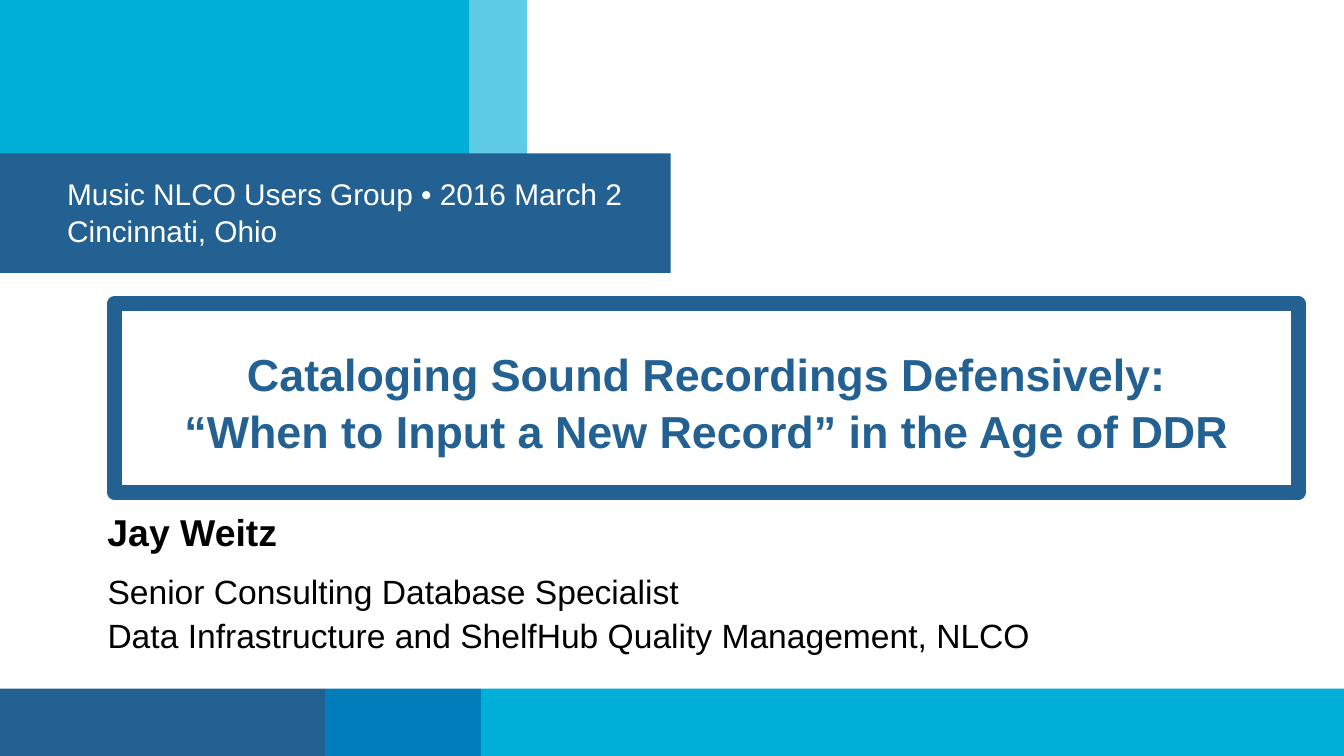
from pptx import Presentation
from pptx.dml.color import RGBColor
from pptx.enum.shapes import MSO_SHAPE
from pptx.enum.text import MSO_ANCHOR, PP_ALIGN
from pptx.oxml.ns import qn
from pptx.util import Inches, Pt
from lxml import etree

RECTANGLE = MSO_SHAPE.RECTANGLE
TOP = MSO_ANCHOR.TOP
LEFT, CENTER = PP_ALIGN.LEFT, PP_ALIGN.CENTER

WIDTH = Inches(10)
HEIGHT = WIDTH * 9 // 16
FONT = "Arial"
COLORS = {
    "navy": "236192",
    "blue": "007DBA",
    "cyan": "00AFD7",
    "white": "FFFFFF",
    "black": "000000",
}


def color(name):
    """Return the named colour."""
    return RGBColor.from_string(COLORS[name])


def area(left, top, width, height):
    """Turn percentages of the slide's size into lengths."""
    return [round(share * side / 100) for share, side in
            zip((left, top, width, height), (WIDTH, HEIGHT) * 2)]


def add_block(slide, place, fill, opacity=100):
    """Add a plain colour block, optionally see-through."""
    block = slide.shapes.add_shape(RECTANGLE, *area(*place))
    block.shadow.inherit = False
    block.line.fill.background()
    block.fill.solid()
    block.fill.fore_color.rgb = color(fill)
    if opacity < 100:
        tint = block.fill._xPr.find(qn("a:solidFill"))[0]
        etree.SubElement(tint, qn("a:alpha"), val=str(opacity * 1000))
    return block


def add_frame(slide, place, outline, thickness):
    """Add an unfilled rectangle with a heavy outline."""
    frame = slide.shapes.add_shape(RECTANGLE, *area(*place))
    frame.shadow.inherit = False
    frame.fill.background()
    frame.line.color.rgb = color(outline)
    frame.line.width = Pt(thickness)
    return frame


def add_label(slide, place):
    """Add an empty text box."""
    return slide.shapes.add_textbox(*area(*place))


def write(holder, lines, size, ink, insets, bold=False, align=LEFT, spacing=1, before=0):
    """Write one paragraph per line, all in one style."""
    frame = holder.text_frame
    frame.word_wrap = True
    frame.vertical_anchor = TOP
    (frame.margin_left, frame.margin_top,
     frame.margin_right, frame.margin_bottom) = map(Inches, insets)
    frame.text = "\n".join(lines)
    for paragraph in frame.paragraphs:
        paragraph.alignment = align
        paragraph.line_spacing = spacing
        paragraph.space_before = Pt(before)
        for run in paragraph.runs:
            run.font.name = FONT
            run.font.size = Pt(size)
            run.font.bold = bold
            run.font.color.rgb = color(ink)


def add_bands(slide):
    """Add the footer band and the two blocks at the top."""
    left = 0
    for width, fill in ((24.2, "navy"), (11.6, "blue"), (64.2, "cyan")):
        add_block(slide, (left, 91.1, width, 8.9), fill)
        left += width
    add_block(slide, (0, 0, 34.9, 20.6), "cyan")
    add_block(slide, (34.3, 0, 4.9, 20.6), "cyan", opacity=63)


def main():
    """Build and save the title slide."""
    deck = Presentation()
    deck.slide_width, deck.slide_height = WIDTH, HEIGHT
    slide = deck.slides.add_slide(deck.slide_layouts[6])
    add_bands(slide)

    event = add_block(slide, (0, 20.3, 49.9, 15.8), "navy")
    write(event, ["Music NLCO Users Group • 2016 March 2", "Cincinnati, Ohio"],
          16, "white", (0.5, 0.15, 0.3, 0.2), spacing=1.05)

    title = add_frame(slide, (8.5, 40.2, 88.1, 24.9), "navy", 8)
    write(title, ["Cataloging Sound Recordings Defensively:",
                  "“When to Input a New Record” in the Age of DDR"],
          24, "navy", (0.5, 0.3, 0.5, 0.3), bold=True, align=CENTER, spacing=1.05)

    speaker = add_label(slide, (8, 66.5, 20.3, 7.8))
    write(speaker, ["Jay Weitz"], 20, "black", (0, 0.05, 0.1, 0.05), bold=True, before=4)

    role = add_label(slide, (8, 76.1, 71.2, 13.3))
    write(role, ["Senior Consulting Database Specialist",
                 "Data Infrastructure and ShelfHub Quality Management, NLCO"],
          18, "black", (0, 0, 0.1, 0.05), spacing=0.9, before=4)

    deck.save("out.pptx")


if __name__ == "__main__":
    main()
